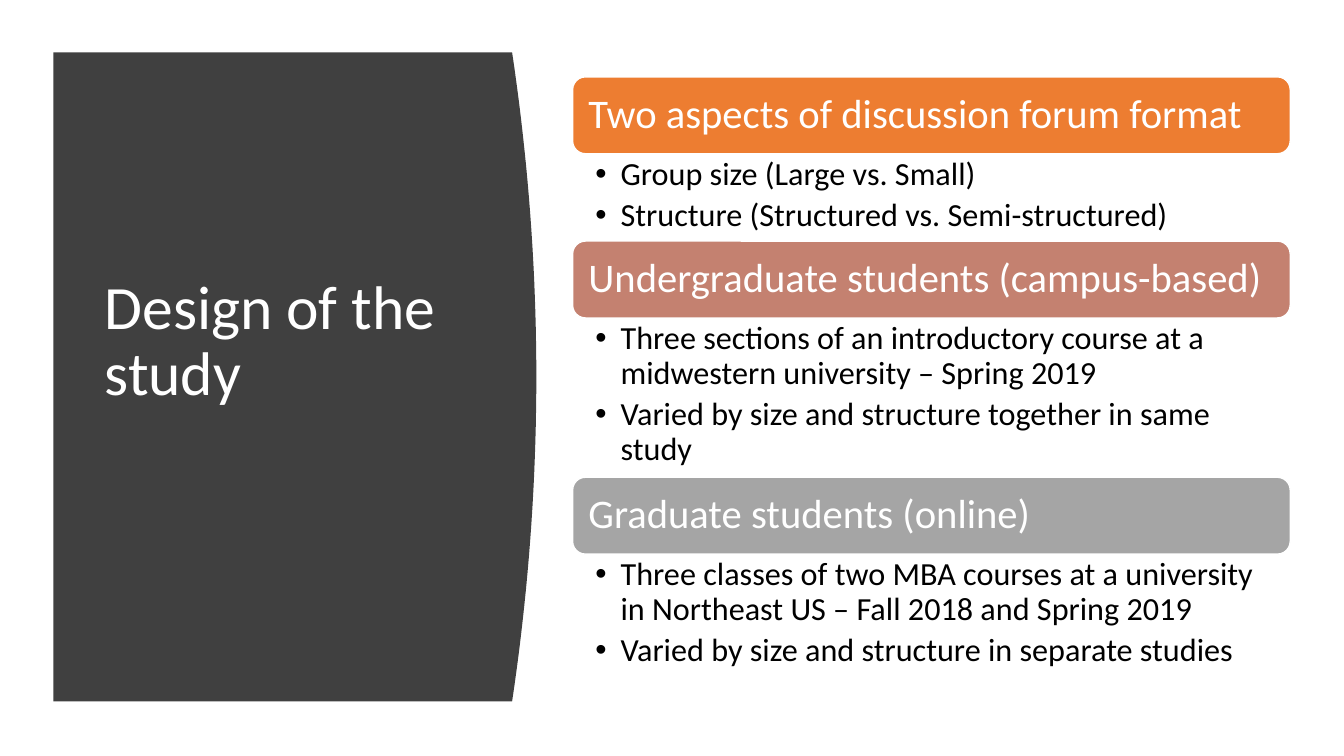
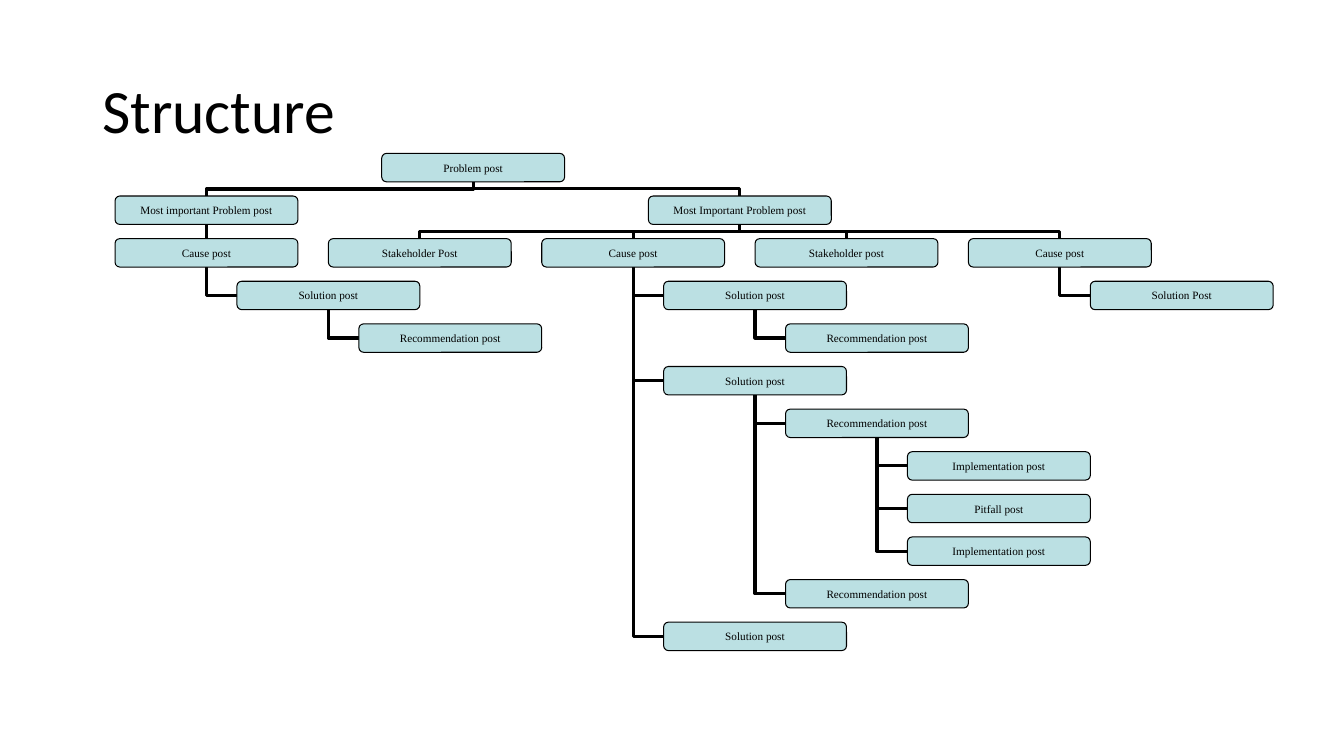
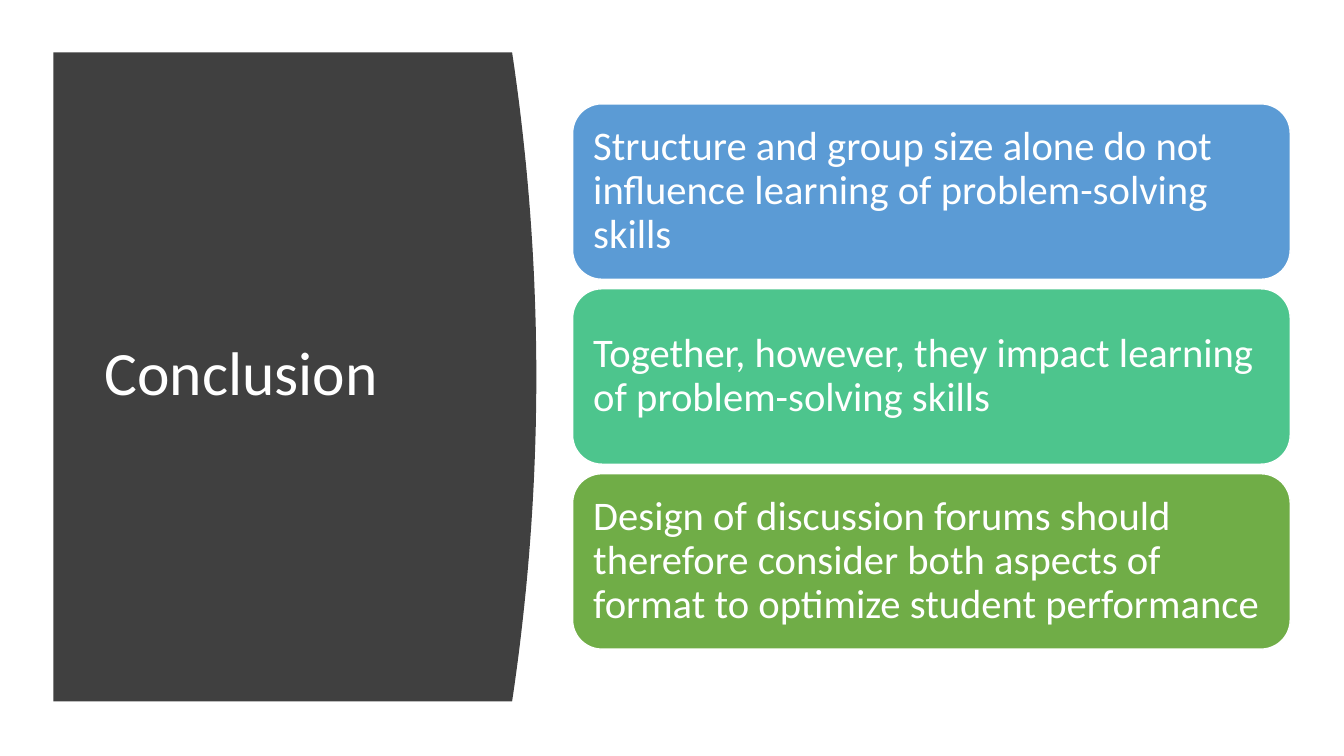
from lxml.etree import SubElement
from pptx import Presentation
from pptx.dml.color import RGBColor
from pptx.enum.shapes import MSO_CONNECTOR, MSO_SHAPE
from pptx.enum.text import MSO_ANCHOR, PP_ALIGN
from pptx.oxml.ns import qn
from pptx.util import Pt

WHITE, BLACK, CHARCOAL = "FFFFFF", "000000", "404040"
ORANGE, CLAY, GRAY = "ED7D31", "C48170", "A5A5A5"
BLUE, MINT, GREEN, PALE = "5B9BD5", "4DC58D", "70AD47", "BBE0E3"
SANS, SERIF = "Calibri", "Times New Roman"
PANEL = (38.2, 37.4, 327.6, 463.7)
PANEL_TITLE = (67.7, 79.9, 269.3, 377.3)
TITLE_LINE = 48
CONTENT_X, CONTENT_W = 409, 512.6

SECTIONS = [
    ("Two aspects of discussion forum format", ORANGE, 62.4,
     ["Group size (Large vs. Small)", "Structure (Structured vs. Semi-structured)"]),
    ("Undergraduate students (campus-based)", CLAY, 113.8,
     ["Three sections of an introductory course at a midwestern university – Spring 2019",
      "Varied by size and structure together in same study"]),
    ("Graduate students (online)", GRAY, 87,
     ["Three classes of two MBA courses at a university in Northeast US – Fall 2018 and Spring 2019",
      "Varied by size and structure in separate studies"]),
]
CONCLUSIONS = [
    ("Structure and group size alone do not influence learning of problem-solving skills", BLUE),
    ("Together, however, they impact learning of problem-solving skills", MINT),
    ("Design of discussion forums should therefore consider both aspects of format "
     "to optimize student performance", GREEN),
]
RECOMMENDATION = ("Recommendation post", [])
IMPLEMENTATION = ("Implementation post", [])
POSTS = ("Problem post", [
    ("Most important Problem post", [
        ("Cause post", [("Solution post", [RECOMMENDATION])]),
    ]),
    ("Most Important Problem post", [
        ("Stakeholder Post", []),
        ("Cause post", [
            ("Solution post", [RECOMMENDATION]),
            ("Solution post", [
                ("Recommendation post", [IMPLEMENTATION, ("Pitfall post", []), IMPLEMENTATION]),
                RECOMMENDATION,
            ]),
            ("Solution post", []),
        ]),
        ("Stakeholder post", []),
        ("Cause post", [("Solution Post", [])]),
    ]),
])


def rgb(code):
    """Turn a hex string into a colour."""
    return RGBColor.from_string(code)


def write(shape, lines, size, color, font=SANS, align=PP_ALIGN.LEFT, spacing=0.9,
          anchor=MSO_ANCHOR.MIDDLE, insets=(7.2, 3.6)):
    """Fill a shape with one paragraph per line and return the paragraphs."""
    tf = shape.text_frame
    tf.word_wrap = True
    tf.vertical_anchor = anchor
    tf.margin_left = tf.margin_right = Pt(insets[0])
    tf.margin_top = tf.margin_bottom = Pt(insets[1])
    tf.text = "\n".join(lines)
    for p in tf.paragraphs:
        p.alignment = align
        p.line_spacing = spacing
        for r in p.runs:
            r.font.name = font
            r.font.size = Pt(size)
            r.font.color.rgb = rgb(color)
    return tf.paragraphs


def add_title(s, text, box, color):
    """Place a slide title in a box."""
    write(s.shapes.add_textbox(*map(Pt, box)), [text], 44, color)


def add_card(s, box, fill, line, weight):
    """Draw a filled rounded rectangle."""
    sp = s.shapes.add_shape(MSO_SHAPE.ROUNDED_RECTANGLE, *map(Pt, box))
    sp.shadow.inherit = False
    sp.fill.solid()
    sp.fill.fore_color.rgb = rgb(fill)
    sp.line.color.rgb = rgb(line)
    sp.line.width = Pt(weight)
    return sp


def add_banner(s, text, box, fill):
    """Draw a coloured card with large white text."""
    write(add_card(s, box, fill, WHITE, 1), [text], 29, WHITE, insets=(8.64, 8.64))


def add_bullets(s, lines, box):
    """Place a bulleted list in a box."""
    sp = s.shapes.add_textbox(*map(Pt, box))
    for p in write(sp, lines, 23, BLACK, anchor=MSO_ANCHOR.TOP, insets=(16.3, 2.9)):
        p.space_after = Pt(4.6)
        pPr = p._p.get_or_add_pPr()
        pPr.set("marL", str(Pt(18)))
        pPr.set("indent", str(-Pt(18)))
        SubElement(pPr, qn("a:buFont")).set("typeface", "Arial")
        SubElement(pPr, qn("a:buChar")).set("char", "•")


def add_panel(s, title, box, title_box):
    """Draw the dark panel with a bulging right edge and its title."""
    x, y, w, h = box
    bulge, steps = 17.3, 40
    edge = [(x + w + bulge * 4 * t * (1 - t), y + h * t)
            for t in (i / steps for i in range(steps + 1))]
    outline = s.shapes.build_freeform(Pt(x), Pt(y))
    outline.add_line_segments([(Pt(a), Pt(b)) for a, b in edge + [(x, y + h)]], close=True)
    sp = outline.convert_to_shape()
    sp.shadow.inherit = False
    sp.fill.solid()
    sp.fill.fore_color.rgb = rgb(CHARCOAL)
    sp.line.fill.background()
    add_title(s, title, title_box, WHITE)


def add_sections(s, sections, x, y, w):
    """Stack banners, each followed by its bullets."""
    banner_h = 54.9
    for heading, fill, body_h, lines in sections:
        add_banner(s, heading, (x, y, w, banner_h), fill)
        add_bullets(s, lines, (x, y + banner_h, w, body_h))
        y += banner_h + body_h


def add_conclusions(s, items, x, y, w):
    """Stack equal banners with equal gaps."""
    card_h, gap = 125.3, 6.8
    for i, (text, fill) in enumerate(items):
        add_banner(s, text, (x, y + i * (card_h + gap), w, card_h), fill)


def add_link(s, kind, begin, end, preset=None, turn=None):
    """Draw one black connector, with an optional preset and rotation."""
    c = s.shapes.add_connector(kind, *map(Pt, begin + end))
    c.line.color.rgb = rgb(BLACK)
    c.line.width = Pt(2.25)
    spPr = c._element.spPr
    SubElement(spPr, qn("a:effectLst"))
    if preset:
        spPr.find(qn("a:prstGeom")).set("prst", preset)
    if turn:
        spPr.find(qn("a:xfrm")).set("rot", str(turn * 60000))


def link_below(s, parent, child):
    """Join a parent's bottom to a child's top."""
    (px, py), (cx, cy) = parent, child
    if abs(px - cx) < 0.1:
        add_link(s, MSO_CONNECTOR.STRAIGHT, parent, child)
        return
    mx, my = (px + cx) / 2, (py + cy) / 2
    half_h, half_w = (cy - py) / 2, (px - cx) / 2
    add_link(s, MSO_CONNECTOR.ELBOW, (mx - half_h, my - half_w),
             (mx + half_h, my + half_w), turn=90)


def add_tree(s, root, left, top):
    """Draw a post tree: three spread levels, then hanging branches."""
    unit, row_h, box_h = 21.77, 30.44, 20.3
    column, box_w, indent = 7 * unit, 6 * unit, 4 * unit
    boxes, columns = [], [0]

    def bottom(x, row):
        """Return the bottom centre of a box."""
        return x + box_w / 2, top + row * row_h + box_h

    def hang(node, x, row):
        """Place a branch downwards and return the next free row."""
        label, children = node
        boxes.append((label, x, row))
        free = row + 1
        for child in children:
            add_link(s, MSO_CONNECTOR.ELBOW, (x + indent, top + free * row_h + box_h / 2),
                     bottom(x, row), preset="bentConnector2")
            free = hang(child, x + indent, free)
        return free

    def spread(node, row):
        """Place a node centred over its children and return its left edge."""
        label, children = node
        if row == 2:
            x = left + columns[0] * column
            columns[0] += 1
            hang(node, x, row)
            return x
        xs = [spread(child, row + 1) for child in children]
        x = (xs[0] + xs[-1]) / 2
        for child_x in xs:
            link_below(s, bottom(x, row), (child_x + box_w / 2, top + (row + 1) * row_h))
        boxes.append((label, x, row))
        return x

    spread(root, 0)
    for label, x, row in boxes:
        sp = add_card(s, (x, top + row * row_h, box_w, box_h), PALE, BLACK, 0.75)
        write(sp, [label], 8, BLACK, SERIF, PP_ALIGN.CENTER, 1, insets=(0, 0))


def main():
    """Build the three slides."""
    prs = Presentation()
    prs.slide_width, prs.slide_height = Pt(960), Pt(540)
    design, structure, conclusion = [prs.slides.add_slide(prs.slide_layouts[6]) for _ in range(3)]

    x, y, w, h = PANEL_TITLE
    add_panel(design, "Design of the study", PANEL, (x, y, w, h - TITLE_LINE))
    add_sections(design, SECTIONS, CONTENT_X, 54.9, CONTENT_W)

    add_title(structure, "Structure", (66, 28.75, 828, 104.4), BLACK)
    add_tree(structure, POSTS, 82.2, 109.6)

    add_panel(conclusion, "Conclusion", PANEL, PANEL_TITLE)
    add_conclusions(conclusion, CONCLUSIONS, CONTENT_X, 74.2, CONTENT_W)
    prs.save("out.pptx")


if __name__ == "__main__":
    main()
